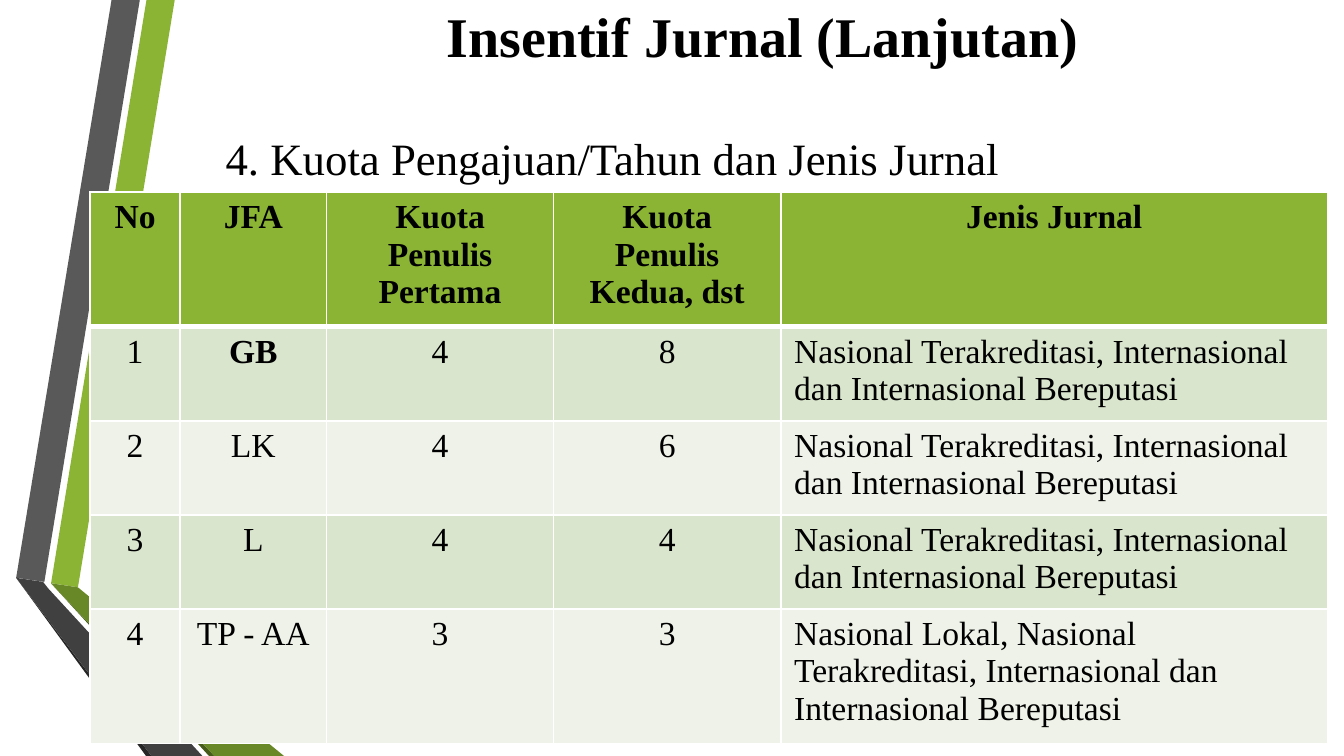
from lxml import etree
from pptx import Presentation
from pptx.dml.color import RGBColor
from pptx.enum.text import MSO_ANCHOR, PP_ALIGN
from pptx.oxml.ns import qn
from pptx.util import Inches, Pt

FONT = "Times New Roman"
BLACK = RGBColor(0x00, 0x00, 0x00)
WHITE = RGBColor(0xFF, 0xFF, 0xFF)
GREEN = RGBColor(0x8B, 0xB4, 0x34)
GREEN_MID = RGBColor(0x68, 0x87, 0x27)
GREEN_DARK = RGBColor(0x46, 0x5A, 0x1A)
GREY = RGBColor(0x59, 0x59, 0x59)
GREY_MID = RGBColor(0x40, 0x40, 0x40)
GREY_DARK = RGBColor(0x26, 0x26, 0x26)
BAND_ODD = RGBColor(0xDA, 0xE5, 0xCE)
BAND_EVEN = RGBColor(0xEE, 0xF2, 0xE8)

# Ribbon outlines in inches from the corner of the ribbon box
RIBBONS = [
    (GREEN, [(0.26, 4.34), (0.46, 4.37), (1.18, 0), (0.97, 0)]),
    (GREY, [(0.92, 0), (0.71, 0), (0, 4.3), (0.21, 4.33)]),
    (GREY_DARK, [(0, 4.3), (0.97, 5.63), (1.01, 5.63)]),
    (GREEN_DARK, [(0.26, 4.34), (1.44, 5.63), (1.48, 5.63)]),
    (GREEN_MID, [(0.26, 4.34), (1.48, 5.63), (2, 5.63), (0.46, 4.37)]),
    (GREY_MID, [(1.39, 5.63), (0.24, 4.38), (0.2, 4.33), (0, 4.3), (1.01, 5.63)]),
]

HEADERS = ["No", "JFA", "Kuota Penulis Pertama", "Kuota Penulis Kedua, dst", "Jenis Jurnal"]
ACCREDITED = "Nasional Terakreditasi, Internasional dan Internasional Bereputasi"
ROWS = [
    ["1", "GB", "4", "8", ACCREDITED],
    ["2", "LK", "4", "6", ACCREDITED],
    ["3", "L", "4", "4", ACCREDITED],
    ["4", "TP - AA", "3", "3", "Nasional Lokal, " + ACCREDITED],
]
COL_WIDTHS = [0.67, 1.09, 1.69, 1.69, 4.07]
# Minimum heights: rows grow to fit their text
ROW_HEIGHTS = [0.41, 0.53, 0.31, 0.28, 0.37]


def add_run(p, text, size, bold=False):
    r = p.add_run()
    r.text = text
    r.font.name = FONT
    r.font.size = Pt(size)
    r.font.bold = bold
    r.font.color.rgb = BLACK


def add_ribbons(slide, left, top):
    for color, points in RIBBONS:
        pts = [(Inches(left + x), Inches(top + y)) for x, y in points]
        builder = slide.shapes.build_freeform(*pts[0])
        builder.add_line_segments(pts[1:], close=True)
        sp = builder.convert_to_shape()
        sp.shadow.inherit = False
        sp.fill.solid()
        sp.fill.fore_color.rgb = color
        sp.line.fill.background()


def add_text(slide, box, text, size, bold=False, align=PP_ALIGN.LEFT,
             anchor=MSO_ANCHOR.TOP, before=0):
    tf = slide.shapes.add_textbox(*map(Inches, box)).text_frame
    tf.word_wrap = True
    tf.vertical_anchor = anchor
    p = tf.paragraphs[0]
    p.alignment = align
    p.space_before = Pt(before)
    add_run(p, text, size, bold)


def set_borders(cell, top, bottom):
    # Borders must come before the fill in the cell properties
    tc_pr = cell._tc.get_or_add_tcPr()
    for side, width in (("L", 1), ("R", 1), ("T", top), ("B", bottom)):
        ln = etree.SubElement(tc_pr, qn(f"a:ln{side}"), w=str(Pt(width)))
        fill = etree.SubElement(ln, qn("a:solidFill"))
        etree.SubElement(fill, qn("a:srgbClr"), val=str(WHITE))


def add_quota_table(slide, box):
    data = [HEADERS] + ROWS
    frame = slide.shapes.add_table(len(data), len(HEADERS), *map(Inches, box))
    table = frame.table
    for col, width in zip(table.columns, COL_WIDTHS):
        col.width = Inches(width)
    for row, height in zip(table.rows, ROW_HEIGHTS):
        row.height = Inches(height)
    # Changing the rows resizes the frame, so restore its height
    frame.height = Inches(box[3])

    for i, values in enumerate(data):
        header = i == 0
        color = GREEN if header else BAND_ODD if i % 2 else BAND_EVEN
        for j, text in enumerate(values):
            cell = table.cell(i, j)
            set_borders(cell, top=3 if i == 1 else 1, bottom=3 if header else 1)
            cell.fill.solid()
            cell.fill.fore_color.rgb = color
            p = cell.text_frame.paragraphs[0]
            centred = header or j < len(values) - 1
            p.alignment = PP_ALIGN.CENTER if centred else PP_ALIGN.LEFT
            add_run(p, text, 18, bold=header or text == "GB")


def main():
    prs = Presentation()
    prs.slide_width = Inches(10)
    prs.slide_height = Inches(10) * 9 // 16
    slide = prs.slides.add_slide(prs.slide_layouts[6])

    # Side decoration
    add_ribbons(slide, 0.12, 0)
    # Title and subtitle
    add_text(slide, (2.01, -0.07, 7.33, 0.63), "Insentif Jurnal (Lanjutan)", 30,
             bold=True, align=PP_ALIGN.CENTER, anchor=MSO_ANCHOR.BOTTOM)
    add_text(slide, (1.58, 0.92, 8.19, 3.07),
             "4. Kuota Pengajuan/Tahun dan Jenis Jurnal", 24, before=3.5)
    # Quota table
    add_quota_table(slide, (0.67, 1.43, 9.21, 4.1))

    prs.save("out.pptx")


if __name__ == "__main__":
    main()
